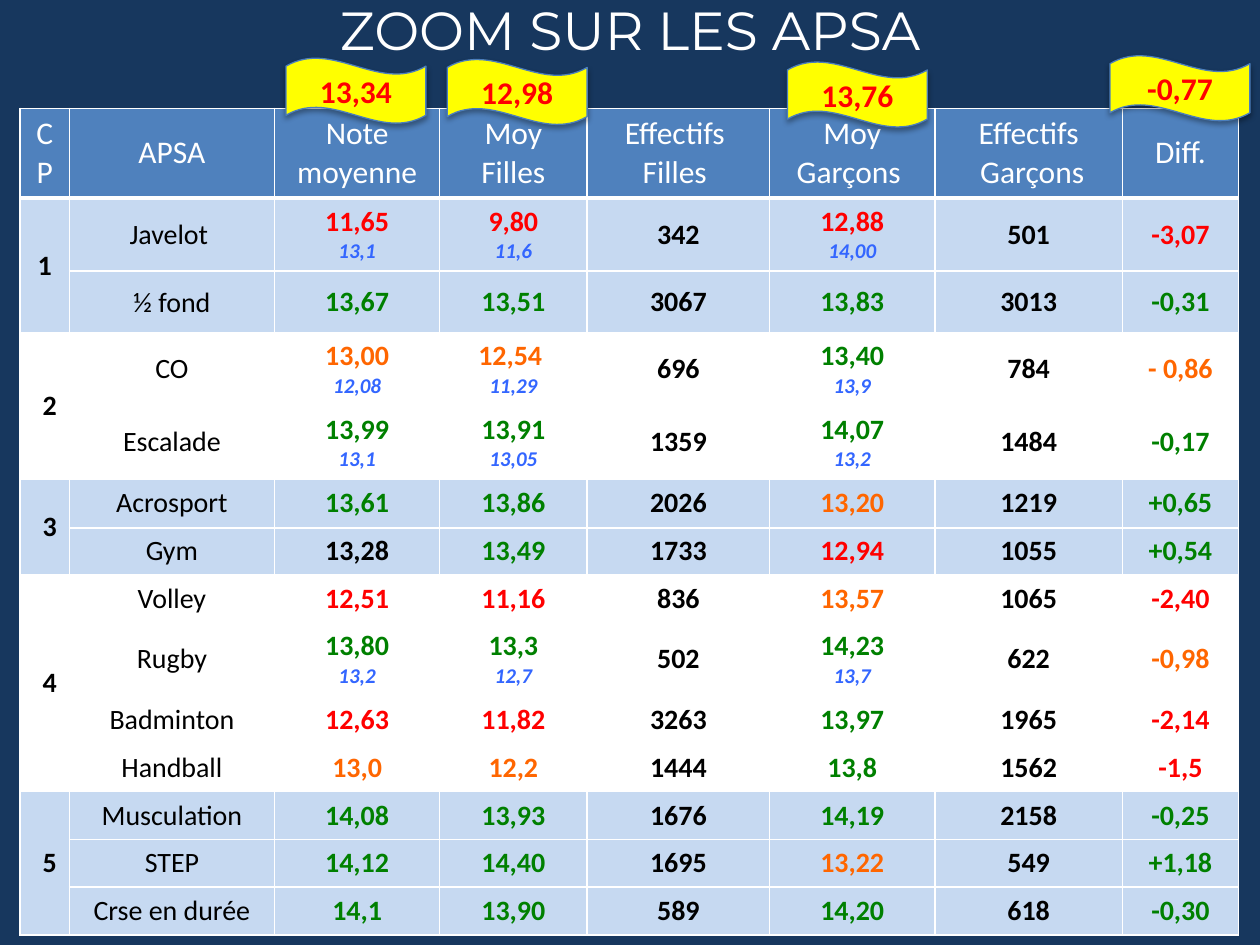
import pptx
import pptx.dml.color
import pptx.enum.shapes
import pptx.enum.text
import pptx.oxml
import pptx.util
from lxml import etree
from pptx.oxml.ns import nsdecls, qn
from pptx.util import Inches

RGBColor = pptx.dml.color.RGBColor
Anchor = pptx.enum.text.MSO_ANCHOR
Align = pptx.enum.text.PP_ALIGN

NAVY = RGBColor(0x17, 0x37, 0x5E)
HEADER_BLUE = RGBColor(0x4F, 0x81, 0xBD)
LINE_BLUE = RGBColor(0x4B, 0x7E, 0xBC)
PALE_BLUE = RGBColor(0xC6, 0xD9, 0xF1)
NOTE_BLUE = RGBColor(0x33, 0x66, 0xFF)
YELLOW = RGBColor(0xFF, 0xFF, 0x00)
WHITE = RGBColor(0xFF, 0xFF, 0xFF)
BLACK = RGBColor(0, 0, 0)
RED = RGBColor(0xFF, 0, 0)
GREEN = RGBColor(0, 0x80, 0)
ORANGE = RGBColor(0xFF, 0x66, 0)
TONES = {"R": RED, "G": GREEN, "O": ORANGE, "K": BLACK}

COLUMN_WIDTHS = [0.39, 1.63, 1.31, 1.17, 1.45, 1.31, 1.49, 0.92]
HEADERS = ["CP", "APSA", "Note moyenne", "Moy\nFilles", "Effectifs \nFilles ",
           "Moy\nGarçons ", "Effectifs\n Garçons", "Diff."]
# Per CP: activity, row height, tones of the six values, values (second line: earlier mark)
GROUPS = {
    "1": [
        ("Javelot ", 0.58, "RRKRKR",
         ["11,65\n13,1", "9,80\n11,6", "342", "12,88\n14,00", "501", "-3,07"]),
        ("½ fond", 0.49, "GGKGKG", ["13,67", "13,51", "3067", "13,83", "3013", "-0,31"]),
    ],
    "2": [
        ("CO", 0.58, "OOKGKO",
         ["13,00\n12,08", "12,54 \n11,29", "696", "13,40\n13,9", "784", "- 0,86"]),
        ("Escalade", 0.58, "GGKGKG",
         ["13,99\n13,1", "13,91\n13,05", "1359", "14,07\n13,2", "1484", "-0,17"]),
    ],
    "3": [
        ("Acrosport", 0.39, "GGKOKG", ["13,61", "13,86", "2026", "13,20", "1219", "+0,65"]),
        ("Gym", 0.37, "KGKRKG", ["13,28", "13,49", "1733", "12,94", "1055", "+0,54"]),
    ],
    "4": [
        ("Volley", 0.38, "RRKOKR", ["12,51", "11,16", "836", "13,57", "1065", "-2,40"]),
        ("Rugby", 0.58, "GGKGKO",
         ["13,80\n13,2", "13,3\n12,7", "502", "14,23\n13,7", "622", "-0,98"]),
        ("Badminton", 0.38, "RRKGKR", ["12,63", "11,82", "3263", "13,97", "1965", "-2,14"]),
        ("Handball", 0.38, "OOKGKR", ["13,0", "12,2", "1444", "13,8", "1562", "-1,5"]),
    ],
    "5": [
        ("Musculation", 0.38, "GGKGKG", ["14,08", "13,93", "1676", "14,19", "2158", "-0,25"]),
        ("STEP", 0.38, "GGKOKG", ["14,12", "14,40", "1695", "13,22", "549", "+1,18"]),
        ("Crse en durée", 0.38, "GGKGKG", ["14,1", "13,90", "589", "14,20", "618", "-0,30"]),
    ],
}
AVERAGES = [("13,34", 2.27, 0.46), ("12,98", 3.55, 0.47),
            ("13,76", 6.25, 0.49), ("-0,77", 8.81, 0.44)]


class SlideBuilder:
    body_font = "Calibri"
    title_font = "Montserrat"

    def __init__(self, page):
        self.page = page
        page.background.fill.solid()
        page.background.fill.fore_color.rgb = NAVY

    def style(self, para, size, color, bold=False, italic=False, font=None, align=Align.CENTER):
        para.alignment = align
        for span in para.runs:
            span.font.name = font or self.body_font
            span.font.size = pptx.util.Pt(size)
            span.font.color.rgb = color
            span.font.bold = bold
            span.font.italic = italic

    def title(self, text):
        box = self.page.shapes.add_textbox(0, 0, Inches(10), Inches(0.46))
        frame = box.text_frame
        frame.word_wrap = True
        frame.vertical_anchor = Anchor.MIDDLE
        frame.text = text
        self.style(frame.paragraphs[0], 30.6, WHITE, font=self.title_font)

    def table(self, left, top, widths, heights):
        frame = self.page.shapes.add_table(
            len(heights), len(widths), Inches(left), Inches(top),
            Inches(sum(widths)), Inches(sum(heights)))
        for column, width in zip(frame.table.columns, widths):
            column.width = Inches(width)
        for row, height in zip(frame.table.rows, heights):
            row.height = Inches(height)
        return frame.table

    def cell(self, cell, text, fill, size, color, bold=False, align=Align.CENTER,
             bottom=1, tight=False):
        """Fill one cell; lines after a value's first are small blue italics."""
        cell.vertical_anchor = Anchor.MIDDLE
        if tight:
            cell.margin_left = cell.margin_right = cell.margin_top = Inches(0.01)
            cell.margin_bottom = 0
        cell.text_frame.text = text
        for index, para in enumerate(cell.text_frame.paragraphs):
            if index and bold:
                self.style(para, 12, NOTE_BLUE, bold=True, italic=True)
            else:
                self.style(para, size, color, bold, align=align)
        self.borders(cell, bottom)
        cell.fill.solid()
        cell.fill.fore_color.rgb = fill

    def borders(self, cell, bottom):
        properties = cell._tc.get_or_add_tcPr()
        for side, width in (("lnL", 1), ("lnR", 1), ("lnT", 1), ("lnB", bottom)):
            line = etree.SubElement(properties, qn(f"a:{side}"), w=str(pptx.util.Pt(width)))
            solid = etree.SubElement(line, qn("a:solidFill"))
            etree.SubElement(solid, qn("a:srgbClr"), val=str(WHITE))

    def banner(self, text, left, top):
        wave = self.page.shapes.add_shape(
            pptx.enum.shapes.MSO_SHAPE.WAVE, Inches(left), Inches(top),
            Inches(1.11), Inches(0.52))
        wave.fill.solid()
        wave.fill.fore_color.rgb = YELLOW
        wave.line.color.rgb = LINE_BLUE
        wave.line.width = pptx.util.Pt(0.75)
        wave._element.spPr.append(pptx.oxml.parse_xml(
            f'<a:effectLst {nsdecls("a")}>'
            '<a:outerShdw blurRad="40000" dist="23000" dir="5400000" rotWithShape="0">'
            '<a:srgbClr val="000000"><a:alpha val="35000"/></a:srgbClr>'
            '</a:outerShdw></a:effectLst>'))
        wave.text_frame.vertical_anchor = Anchor.MIDDLE
        wave.text_frame.text = text
        self.style(wave.text_frame.paragraphs[0], 18, RED, bold=True)


def add_results(builder):
    heights = [0.69] + [entry[1] for group in GROUPS.values() for entry in group]
    table = builder.table(0.16, 0.86, COLUMN_WIDTHS, heights)
    for column, text in enumerate(HEADERS):
        builder.cell(table.cell(0, column), text, HEADER_BLUE, 18, WHITE, bottom=3)

    row = 1
    for number, (group_name, group) in enumerate(GROUPS.items()):
        fill = WHITE if number % 2 else PALE_BLUE
        first = number == 0
        table.cell(row, 0).merge(table.cell(row + len(group) - 1, 0))
        for index, (activity, _, tones, values) in enumerate(group):
            builder.cell(table.cell(row, 0), "" if index else group_name, fill, 16, BLACK,
                         bold=True, align=Align.CENTER if first else Align.RIGHT, tight=first)
            builder.cell(table.cell(row, 1), activity, fill, 16, BLACK, tight=first)
            for column, (tone, value) in enumerate(zip(tones, values), start=2):
                builder.cell(table.cell(row, column), value, fill, 16, TONES[tone], bold=True)
            row += 1


def main():
    deck = pptx.Presentation()
    deck.slide_width, deck.slide_height = Inches(10), Inches(7.5)
    builder = SlideBuilder(deck.slides.add_slide(deck.slide_layouts[6]))
    add_results(builder)
    builder.title("ZOOM SUR LES APSA")
    for text, left, top in AVERAGES:
        builder.banner(text, left, top)
    deck.save("out.pptx")


if __name__ == "__main__":
    main()
